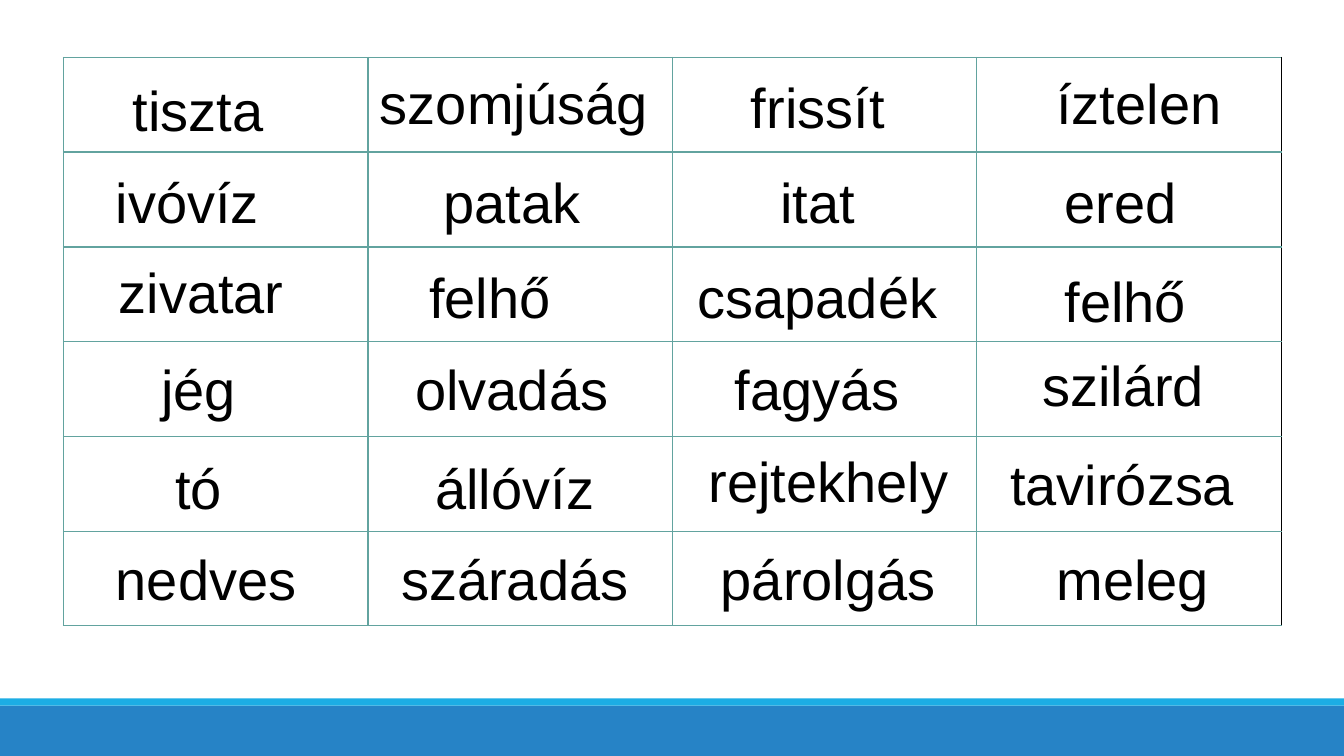
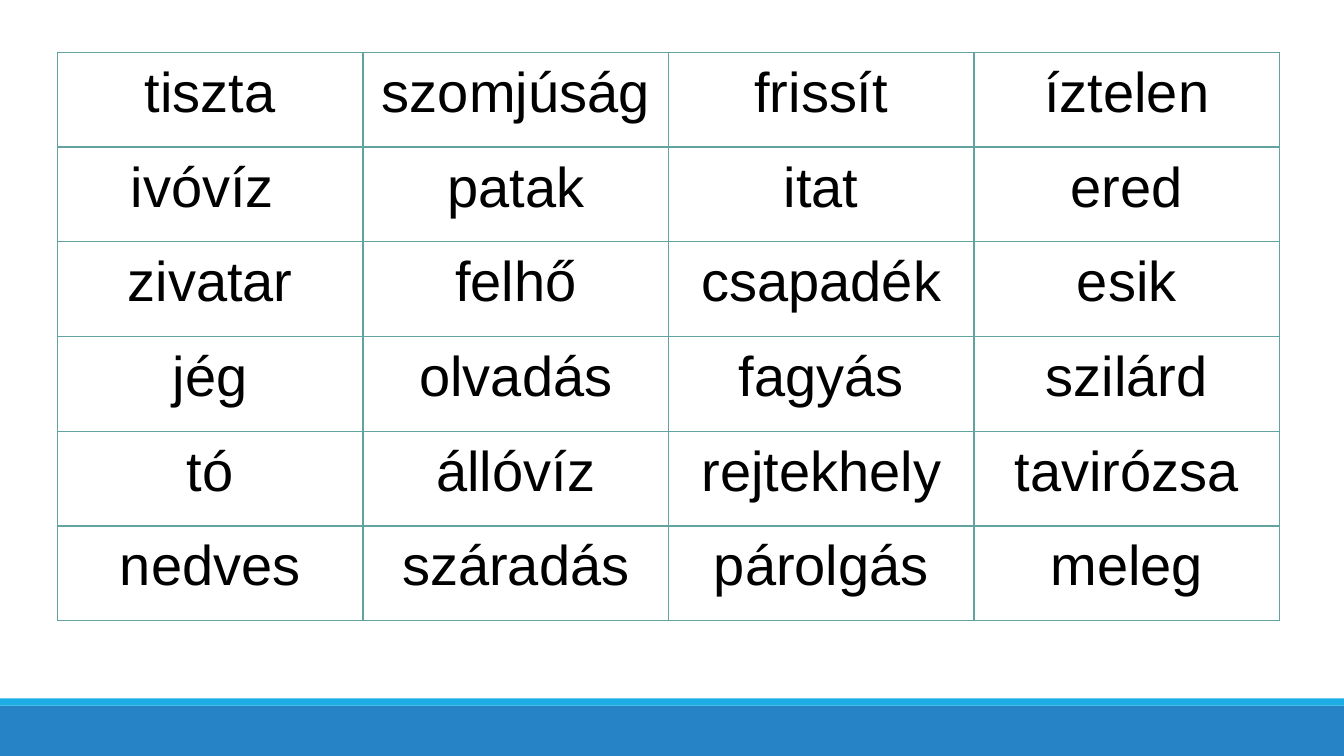
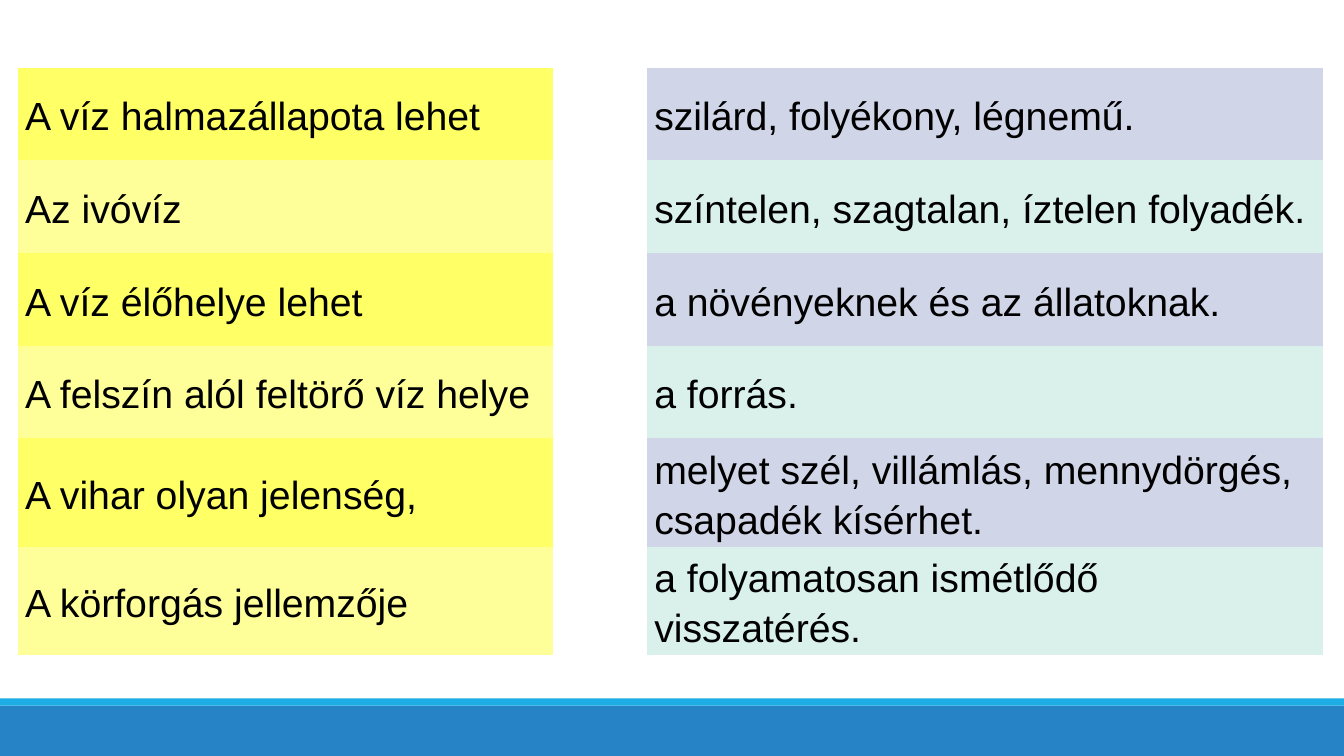
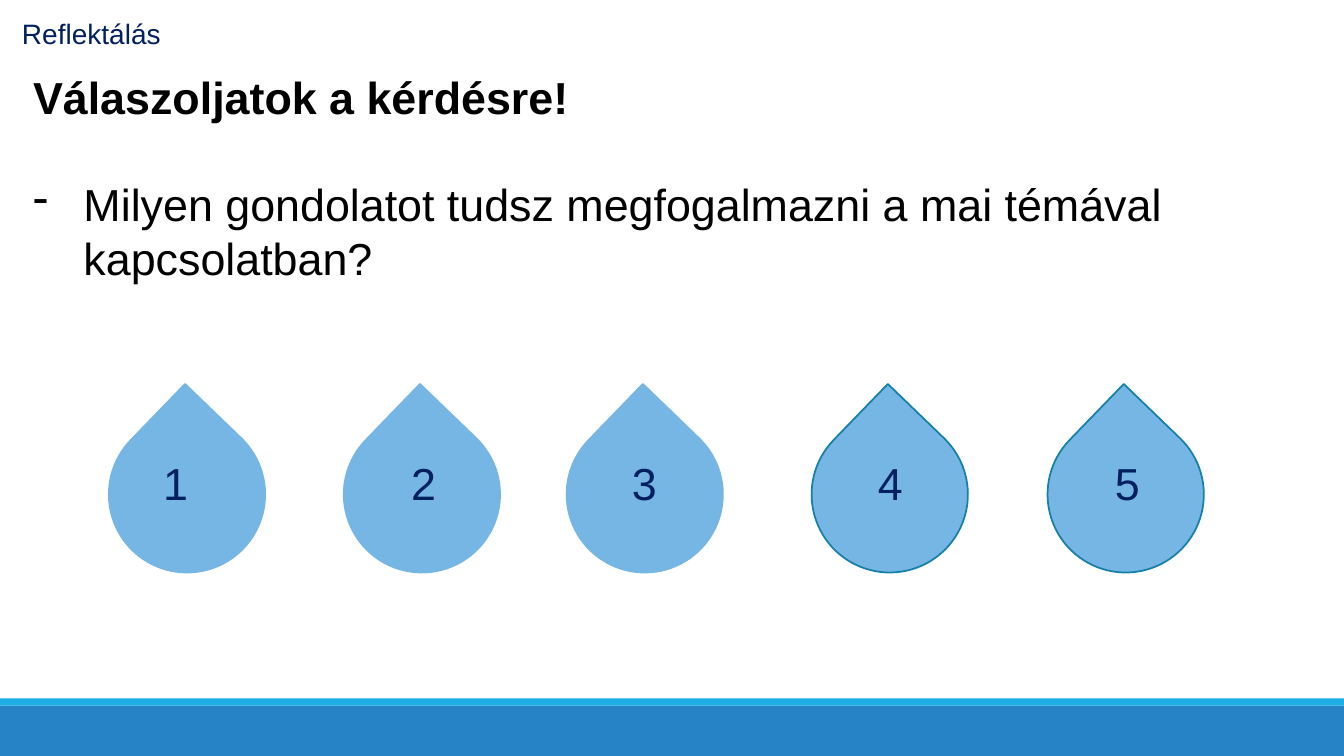
import dataclasses

import pptx
import pptx.dml.color
import pptx.enum.shapes
import pptx.enum.text
import pptx.oxml.ns
import pptx.util
from lxml import etree

Inches = pptx.util.Inches
Pt = pptx.util.Pt
SHAPES = pptx.enum.shapes.MSO_SHAPE
ALIGN = pptx.enum.text.PP_ALIGN
ANCHOR = pptx.enum.text.MSO_ANCHOR
AUTO = pptx.enum.text.MSO_AUTO_SIZE
qn = pptx.oxml.ns.qn


@dataclasses.dataclass(frozen=True)
class Theme:
    """Colours, font and type sizes of the deck."""
    font: str = "Arial"
    ink: str = "000000"
    navy: str = "002060"
    band: str = "2683C6"
    stripe: str = "1CADE4"
    grid: str = "62A39F"
    drop: str = "75B6E5"
    drop_edge: str = "1580A9"
    starts: tuple = ("FFFF66", "FFFF99")
    ends: tuple = ("D0D5E7", "D9F1EA")
    word: int = 40
    body: int = 32
    sentence: int = 28
    label: int = 20


T = Theme()

WORDS = [
    ["tiszta", "szomjúság", "frissít", "íztelen"],
    ["ivóvíz ", "patak", "itat", "ered"],
    ["zivatar", "felhő", "csapadék", "esik"],
    ["jég", "olvadás", "fagyás", "szilárd"],
    ["tó", "állóvíz", "rejtekhely", "tavirózsa"],
    ["nedves", "száradás", "párolgás", "meleg"],
]
SPOTS = [
    [(1.22, 0.7, 1.51), (3.67, 0.63, 2.88), (7.35, 0.67, 1.54), (10.38, 0.63, 1.86)],
    [(1.05, 1.61, 1.64), (4.3, 1.61, 1.57), (7.64, 1.61, 0.95), (10.46, 1.61, 1.33)],
    [(1.08, 2.51, 1.86), (4.16, 2.56, 1.42), (6.82, 2.56, 2.6), (10.46, 2.59, 1.42)],
    [(1.5, 3.47, 0.95), (4.02, 3.47, 2.14), (7.19, 3.47, 1.86), (10.24, 3.43, 1.82)],
    [(1.64, 4.45, 0.67), (4.22, 4.45, 1.79), (6.93, 4.38, 2.6), (9.92, 4.41, 2.45)],
    [(1.05, 5.35, 2.01), (3.88, 5.35, 2.48), (7.05, 5.35, 2.35), (10.38, 5.35, 1.73)],
]
SENTENCES = [
    ("A víz halmazállapota lehet", "szilárd, folyékony, légnemű."),
    ("Az ivóvíz", "színtelen, szagtalan, íztelen folyadék."),
    ("A víz élőhelye lehet", "a növényeknek és az állatoknak."),
    ("A felszín alól feltörő víz helye", "a forrás."),
    ("A vihar olyan jelenség,", "melyet szél, villámlás, mennydörgés, csapadék kísérhet."),
    ("A körforgás jellemzője", "a folyamatosan ismétlődő visszatérés."),
]
DROPS = [
    (1.08, T.drop, 0.44, 0.34),
    (3.41, T.drop, 0.57, 0.34),
    (5.62, T.drop, 0.55, 0.34),
    (8.05, T.drop_edge, 0.56, 0.5),
    (10.39, T.drop_edge, 0.57, 0.61),
]


def rgb(colour):
    """Turn a hex string into a colour."""
    return pptx.dml.color.RGBColor.from_string(colour)


def write(p, text, size, colour=T.ink, bold=False, align=None, spacing=None, before=None, bullet=None):
    """Put formatted text into a paragraph."""
    r = p.add_run()
    r.text = text
    r.font.name = T.font
    r.font.size = Pt(size)
    r.font.bold = bold
    r.font.color.rgb = rgb(colour)
    if align is not None:
        p.alignment = align
    if spacing is not None:
        p.line_spacing = spacing
    if before is not None:
        p.space_before = Pt(before)
    if bullet:
        pPr = p._p.get_or_add_pPr()
        pPr.set("marL", str(Inches(0.5)))
        pPr.set("indent", str(-Inches(0.5)))
        etree.SubElement(pPr, qn("a:buChar")).set("char", bullet)


def add_text_box(s, left, top, width, height, wrap=True):
    """Add an empty text box and return its text frame."""
    sp = s.shapes.add_textbox(Inches(left), Inches(top), Inches(width), Inches(height))
    tf = sp.text_frame
    tf.word_wrap = wrap
    tf.auto_size = AUTO.SHAPE_TO_FIT_TEXT
    return tf


def add_filled(s, kind, left, top, width, height, fill, line=None):
    """Add a preset shape with a flat fill and an optional outline."""
    sp = s.shapes.add_shape(kind, Inches(left), Inches(top), Inches(width), Inches(height))
    sp.shadow.inherit = False
    sp.fill.solid()
    sp.fill.fore_color.rgb = rgb(fill)
    if line:
        sp.line.color.rgb = rgb(line)
        sp.line.width = Pt(1.25)
    else:
        sp.line.fill.background()
    return sp


def new_slide(prs):
    """Add a blank slide with the bottom bands."""
    s = prs.slides.add_slide(prs.slide_layouts[6])
    add_filled(s, SHAPES.RECTANGLE, 0, 7, 13.33, 0.5, T.band)
    add_filled(s, SHAPES.RECTANGLE, 0, 6.93, 13.33, 0.07, T.stripe)
    return s


def set_borders(cell, colour=None, bottom=1, right=None):
    """Draw the four cell borders, or hide them when no colour is given."""
    tcPr = cell._tc.get_or_add_tcPr()
    for side in "LRTB":
        ln = etree.SubElement(tcPr, qn("a:ln" + side))
        if not colour:
            etree.SubElement(ln, qn("a:noFill"))
            continue
        ln.set("w", str(Pt(bottom if side == "B" else 1)))
        fill = etree.SubElement(ln, qn("a:solidFill"))
        shade = right if side == "R" and right else colour
        etree.SubElement(fill, qn("a:srgbClr")).set("val", shade)


def add_plain_table(s, left, top, widths, row_height, rows):
    """Add a table without banding and return it."""
    frame = s.shapes.add_table(rows, len(widths), Inches(left), Inches(top),
                               Inches(sum(widths)), Inches(row_height * rows))
    table = frame.table
    table.first_row = table.horz_banding = False
    for column, width in zip(table.columns, widths):
        column.width = Inches(width)
    for row in table.rows:
        row.height = Inches(row_height)
    for cell in table.iter_cells():
        cell.margin_left = cell.margin_right = Inches(0.07)
        cell.margin_top = cell.margin_bottom = 0
    return table


def add_word_grid(s, left, top, column, words=None, right_edge=None):
    """Add the ruled four by six grid, filled with words if given."""
    table = add_plain_table(s, left, top, [column] * 4, 0.94, len(WORDS))
    for i in range(len(WORDS)):
        for j in range(4):
            cell = table.cell(i, j)
            set_borders(cell, T.grid, 2 if i == 0 else 1, right_edge if j == 3 else None)
            cell.fill.background()
            if words:
                write(cell.text_frame.paragraphs[0], words[i][j], T.word,
                      align=ALIGN.CENTER, spacing=1.15)


def loose_words_slide(prs):
    """Build the grid with separate words laid over it."""
    s = new_slide(prs)
    add_word_grid(s, 0.63, 0.57, 3.02, right_edge=T.ink)
    for words, spots in zip(WORDS, SPOTS):
        for word, (left, top, width) in zip(words, spots):
            tf = add_text_box(s, left, top, width, 0.77, wrap=False)
            shown = "felhő" if word == "esik" else word.strip()
            write(tf.paragraphs[0], shown, T.word)


def word_table_slide(prs):
    """Build the table of words."""
    add_word_grid(new_slide(prs), 0.57, 0.52, 3.03, words=WORDS)


def sentence_slide(prs):
    """Build the table of sentence halves."""
    table = add_plain_table(new_slide(prs), 0.18, 0.67, [5.3, 0.94, 6.7], 0.92, len(SENTENCES))
    for cell in table.iter_cells():
        set_borders(cell)
        cell.fill.background()
    for i, halves in enumerate(SENTENCES):
        for j, text, fills in zip((0, 2), halves, (T.starts, T.ends)):
            cell = table.cell(i, j)
            cell.fill.solid()
            cell.fill.fore_color.rgb = rgb(fills[i % 2])
            cell.vertical_anchor = ANCHOR.MIDDLE
            write(cell.text_frame.paragraphs[0], text, T.sentence, spacing=1.15, before=12)


def reflection_slide(prs):
    """Build the question with its numbered drops."""
    s = new_slide(prs)
    tf = add_text_box(s, 0.23, 0.64, 12.67, 2.26)
    write(tf.paragraphs[0], "Válaszoljatok a kérdésre!", T.body, bold=True)
    write(tf.add_paragraph(), "Milyen gondolatot tudsz megfogalmazni a mai témával kapcsolatban?",
          T.body, before=38, bullet="-")
    tf = add_text_box(s, 0.12, 0.11, 2.36, 0.44)
    write(tf.paragraphs[0], "Reflektálás", T.label, T.navy)
    for number, (left, edge, inset, width) in enumerate(DROPS, 1):
        add_drop(s, left, 4.13, edge, str(number), inset, width)


def add_drop(s, left, top, edge, number, inset, width):
    """Add an upright drop with its number."""
    sp = add_filled(s, SHAPES.TEAR, left, top, 1.55, 1.55, T.drop, edge)
    sp.rotation = 314
    tf = add_text_box(s, left + inset, top + 0.34, width, 0.64)
    write(tf.paragraphs[0], number, T.body, T.navy)


def main():
    """Build and save the deck."""
    prs = pptx.Presentation()
    prs.slide_width = Inches(13.33)
    prs.slide_height = Inches(7.5)
    for build in (loose_words_slide, word_table_slide, sentence_slide, reflection_slide):
        build(prs)
    prs.save("out.pptx")


if __name__ == "__main__":
    main()
